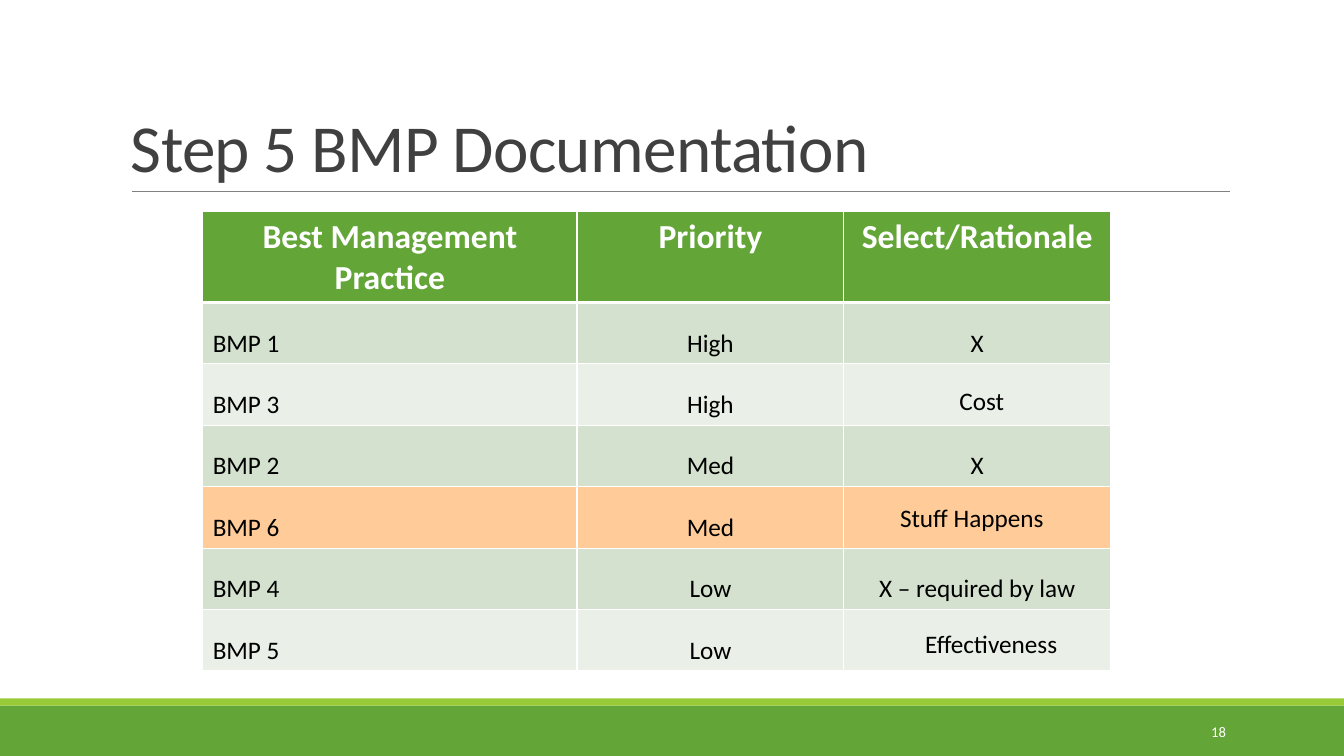
import pptx
import pptx.util
import pptx.dml.color
import pptx.enum.shapes
import pptx.enum.text
import pptx.oxml
import pptx.oxml.ns
import lxml.etree

Pt = pptx.util.Pt
RGBColor = pptx.dml.color.RGBColor
ALIGN = pptx.enum.text.PP_ALIGN
ANCHOR = pptx.enum.text.MSO_ANCHOR
qn = pptx.oxml.ns.qn

GREEN = RGBColor(0x63, 0xA5, 0x37)
LIME = RGBColor(0x99, 0xCB, 0x38)
GRAY = RGBColor(0x80, 0x80, 0x80)
CHARCOAL = RGBColor(0x40, 0x40, 0x40)
BLACK = RGBColor(0, 0, 0)
WHITE = RGBColor(0xFF, 0xFF, 0xFF)
SAGE = RGBColor(0xD3, 0xE1, 0xCE)
MIST = RGBColor(0xEA, 0xF0, 0xE8)
PEACH = RGBColor(0xFF, 0xCC, 0x99)


def write(frame, text, size, color, align=ALIGN.LEFT, anchor=ANCHOR.TOP, bold=False):
    frame.vertical_anchor = anchor
    paragraph = frame.paragraphs[0]
    paragraph.alignment = align
    run = paragraph.add_run()
    run.text = text
    style = {"name": "Calibri", "size": Pt(size), "bold": bold}
    for key, value in style.items():
        setattr(run.font, key, value)
    run.font.color.rgb = color
    return run


def add_label(box, text, size, color, align=ALIGN.LEFT, anchor=ANCHOR.TOP):
    frame = slide.shapes.add_textbox(*map(Pt, box)).text_frame
    frame.word_wrap = True
    return write(frame, text, size, color, align, anchor)


deck = pptx.Presentation()
deck.slide_width, deck.slide_height = Pt(960), Pt(540)
slide = deck.slides.add_slide(deck.slide_layouts[6])

for top, height, color in ((504, 36, GREEN), (498.8, 5.2, LIME)):
    band = slide.shapes.add_shape(
        pptx.enum.shapes.MSO_SHAPE.RECTANGLE, 0, Pt(top), Pt(960), Pt(height))
    band.shadow.inherit = False
    band.fill.solid()
    band.fill.fore_color.rgb = color
    band.line.fill.background()

title_rule = slide.shapes.add_connector(
    pptx.enum.shapes.MSO_CONNECTOR.STRAIGHT, Pt(94.2), Pt(136.8), Pt(878.8), Pt(136.8))
title_rule.line.color.rgb = GRAY
title_rule.line.width = Pt(0.5)
lxml.etree.SubElement(title_rule._element.spPr, qn("a:effectLst"))

title = add_label((86.4, 22.3, 792, 114.5), "Step 5 BMP Documentation", 48, CHARCOAL,
                  anchor=ANCHOR.BOTTOM)
title.font._element.set("spc", "-50")
slide.shapes[-1].text_frame.paragraphs[0].line_spacing = 0.85

practices = [
    ("Best Management Practice", "Priority", "Select/Rationale"),
    ("BMP 1", "High", "X"),
    ("BMP 3", "High", ""),
    ("BMP 2", "Med", "X"),
    ("BMP 6", "Med", ""),
    ("BMP 4", "Low", "X – required by law"),
    ("BMP 5", "Low", ""),
]
row_fills = [GREEN, SAGE, MIST, SAGE, PEACH, SAGE, MIST]
column_widths = [267.4, 190.6, 190.6]
row_heights = [61.2] + [43.9] * 6

table = slide.shapes.add_table(
    len(practices), len(column_widths), Pt(144.8), Pt(151.2),
    Pt(sum(column_widths)), Pt(sum(row_heights))).table
for column, width in zip(table.columns, column_widths):
    column.width = Pt(width)

for r, (row, height, fill) in enumerate(zip(practices, row_heights, row_fills)):
    table.rows[r].height = Pt(height)
    header = r == 0
    for c, text in enumerate(row):
        cell = table.cell(r, c)
        properties = cell._tc.get_or_add_tcPr()
        for side in ("lnL", "lnR", "lnT", "lnB"):
            thick = (header and side == "lnB") or (r == 1 and side == "lnT")
            border = lxml.etree.SubElement(
                properties, qn("a:" + side), w=str(Pt(3 if thick else 1)))
            paint = lxml.etree.SubElement(border, qn("a:solidFill"))
            lxml.etree.SubElement(paint, qn("a:srgbClr"), val=str(WHITE))
        cell.fill.solid()
        cell.fill.fore_color.rgb = fill
        if text:
            cell.vertical_anchor = ANCHOR.TOP if header else ANCHOR.BOTTOM
            write(cell.text_frame, text, 24 if header else 18, WHITE if header else BLACK,
                  ALIGN.CENTER if header or c else ALIGN.LEFT,
                  cell.vertical_anchor, header)

for left, top, width, rationale in (
    (678.2, 271.4, 66.2, "Cost"),
    (653.8, 445, 113.8, "Effectiveness"),
    (635.8, 355, 131.8, "Stuff Happens"),
):
    add_label((left, top, width, 29), rationale, 18, BLACK)

add_label((779.8, 508.3, 103, 28.8), "18", 10.5, WHITE, ALIGN.RIGHT, ANCHOR.MIDDLE)

deck.save("out.pptx")
